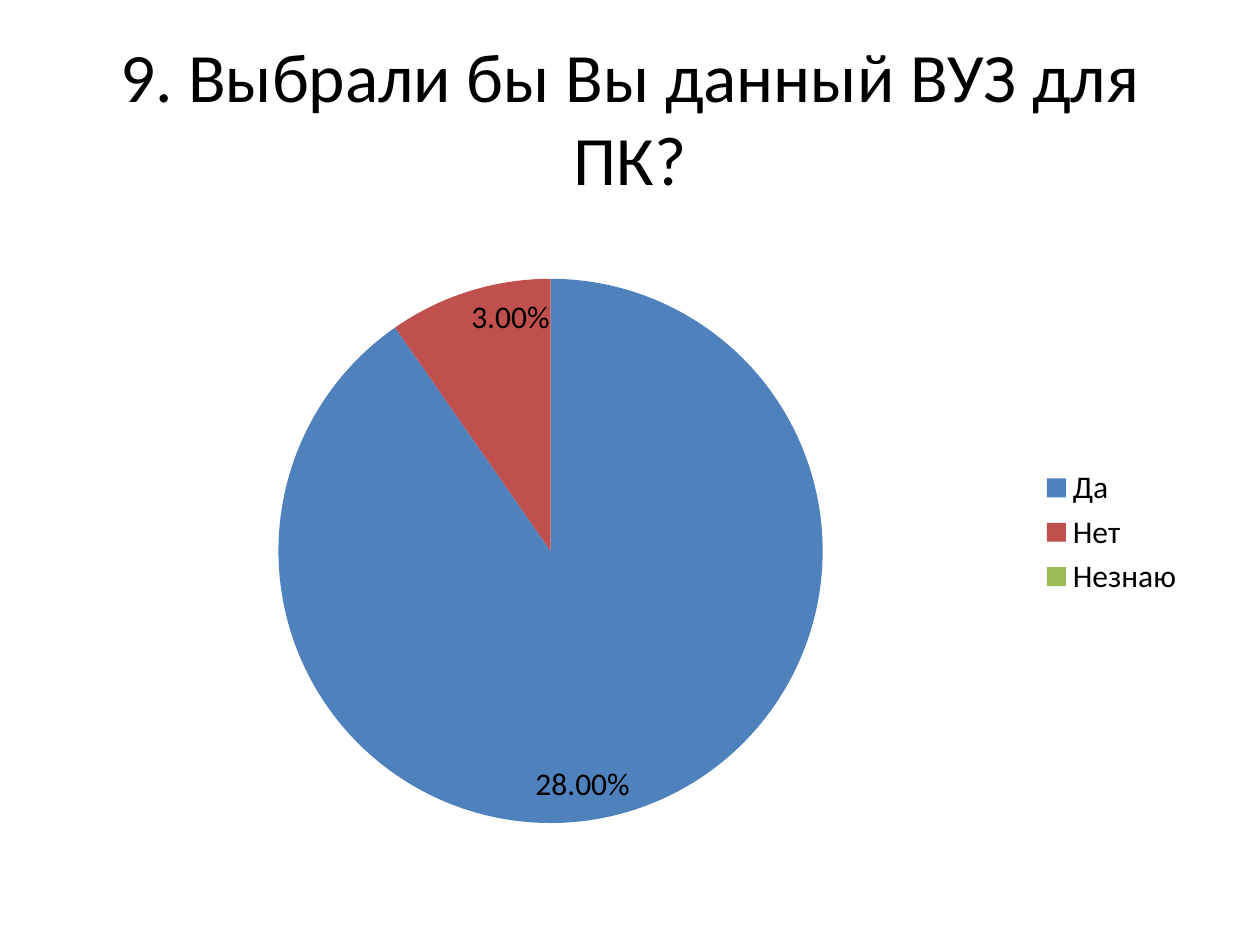
from dataclasses import dataclass

from lxml.etree import SubElement
from pptx import Presentation
from pptx.chart.data import CategoryChartData
from pptx.dml.color import RGBColor
from pptx.enum.chart import XL_CHART_TYPE, XL_LABEL_POSITION, XL_LEGEND_POSITION
from pptx.enum.text import MSO_ANCHOR, PP_ALIGN
from pptx.oxml.ns import qn
from pptx.util import Inches, Pt


@dataclass(frozen=True)
class Theme:
    font: str = "Calibri"
    ink: str = "000000"
    slices: tuple = ("4F81BD", "C0504D", "9BBB59")
    title_size: float = 39.6
    chart_size: float = 18


THEME = Theme()


def style_font(font, size, color=THEME.ink):
    font.name = THEME.font
    font.size = Pt(size)
    font.color.rgb = RGBColor.from_string(color)


def add_text(slide, box, text, *, size, align, anchor):
    frame = slide.shapes.add_textbox(*map(Inches, box)).text_frame
    frame.word_wrap = True
    frame.vertical_anchor = anchor
    paragraph = frame.paragraphs[0]
    paragraph.alignment = align
    run = paragraph.add_run()
    run.text = text
    style_font(run.font, size)


def place_plot(chart, **fractions):
    plot_area = chart._chartSpace.chart.plotArea
    for automatic in plot_area.findall(qn("c:layout")):
        plot_area.remove(automatic)
    layout = SubElement(plot_area, qn("c:layout"))
    plot_area.insert(0, layout)
    manual = SubElement(layout, qn("c:manualLayout"))
    settings = {"layoutTarget": "inner", "xMode": "edge", "yMode": "edge", **fractions}
    for tag, value in settings.items():
        SubElement(manual, qn(f"c:{tag}")).set("val", str(value))


def add_answers_pie(slide, box, answers):
    data = CategoryChartData(number_format="0.00%")
    data.categories = answers.keys()
    data.add_series("Series 1", answers.values())
    chart = slide.shapes.add_chart(XL_CHART_TYPE.PIE, *map(Inches, box), data).chart
    style_font(chart.font, THEME.chart_size)
    chart.has_title = False

    chart.has_legend = True
    chart.legend.position = XL_LEGEND_POSITION.RIGHT
    chart.legend.include_in_layout = False

    pie = chart.plots[0]
    pie.vary_by_categories = True
    for index, color in enumerate(THEME.slices):
        fill = pie.series[0].points[index].format.fill
        fill.solid()
        fill.fore_color.rgb = RGBColor.from_string(color)

    pie.has_data_labels = True
    labels = pie.data_labels
    labels.show_value = True
    labels.show_percentage = False
    labels.number_format = "0.00%"
    labels.number_format_is_linked = False
    labels.position = XL_LABEL_POSITION.INSIDE_END
    style_font(labels.font, THEME.chart_size)
    place_plot(chart, x=0.19, y=0.09, w=0.48, h=0.88)


def main():
    presentation = Presentation()
    presentation.slide_width = Inches(10)
    presentation.slide_height = Inches(7.5)
    slide = presentation.slides.add_slide(presentation.slide_layouts[6])
    add_text(
        slide,
        (0.5, 0.3, 9, 1.25),
        "9. Выбрали бы Вы данный ВУЗ для ПК?",
        size=THEME.title_size,
        align=PP_ALIGN.CENTER,
        anchor=MSO_ANCHOR.MIDDLE,
    )
    add_answers_pie(slide, (0.5, 1.75, 9, 4.95), {"Да": 0.28, "Нет": 0.03, "Незнаю": 0})
    presentation.save("out.pptx")


if __name__ == "__main__":
    main()
